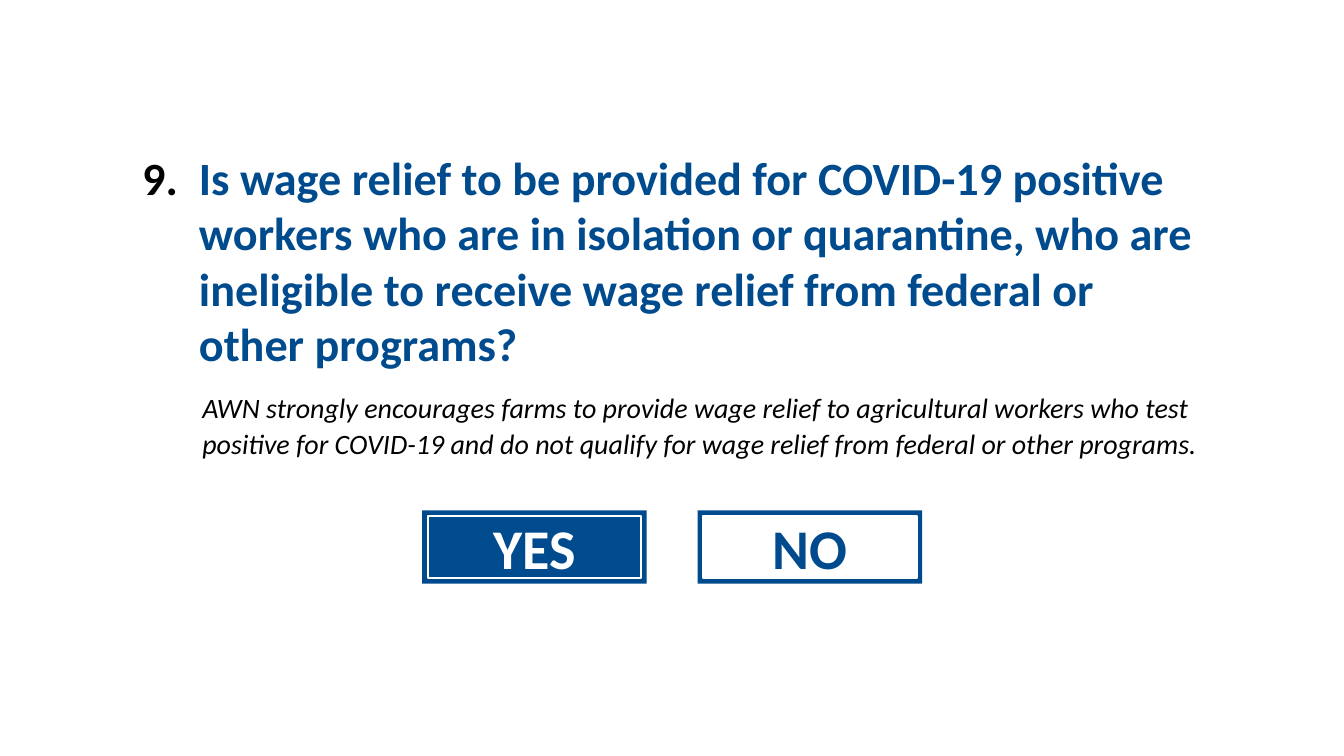
from lxml import etree
from pptx import Presentation
from pptx import util as u
from pptx.dml.color import RGBColor
from pptx.enum import shapes, text
from pptx.oxml.ns import qn

BLUE = RGBColor(0x00, 0x4B, 0x8D)
WHITE = RGBColor(0xFF, 0xFF, 0xFF)
BLACK = RGBColor(0x00, 0x00, 0x00)
QUESTION = (
    "Is wage relief to be provided for COVID-19 positive workers who are in isolation "
    "or quarantine, who are ineligible to receive wage relief from federal or ",
    "other programs?",
)
NOTE = (
    "AWN strongly encourages farms to provide wage relief to agricultural workers who test "
    "positive for COVID-19 and do not qualify for wage relief from federal or other programs."
)


def add_span(para, wording, size, color, bold=False, italic=False):
    """Add one formatted run to a paragraph."""
    span = para.add_run()
    span.text = wording
    span.font.name = "Calibri"
    span.font.size = u.Pt(size)
    span.font.bold = bold
    span.font.italic = italic
    span.font.color.rgb = color


def number_paragraph(para, start, indent):
    """Give a paragraph a black hanging number."""
    properties = para._p.get_or_add_pPr()
    properties.set("marL", str(indent))
    properties.set("indent", str(-indent))
    color = etree.SubElement(properties, qn("a:buClr"))
    etree.SubElement(color, qn("a:srgbClr"), val=str(BLACK))
    etree.SubElement(properties, qn("a:buFont"), typeface="+mj-lt")
    etree.SubElement(properties, qn("a:buAutoNum"), type="arabicPeriod", startAt=str(start))


def fill_question(page, left, top, width, height):
    """Place the numbered question in the title placeholder."""
    title = page.shapes.title
    title.left, title.top, title.width, title.height = left, top, width, height
    frame = title.text_frame
    frame.word_wrap = True
    frame.auto_size = text.MSO_AUTO_SIZE.NONE
    frame.vertical_anchor = text.MSO_ANCHOR.TOP
    para = frame.paragraphs[0]
    para.alignment = text.PP_ALIGN.LEFT
    para.line_spacing = 1.0
    para.space_before = u.Pt(0)
    number_paragraph(para, 9, u.Cm(1.43))
    first, last = QUESTION
    add_span(para, first, 33, BLUE, bold=True)
    para.add_line_break()
    add_span(para, last, 33, BLUE, bold=True)


def add_note(page, left, top, width, height):
    """Place the italic remark below the question."""
    frame = page.shapes.add_textbox(left, top, width, height).text_frame
    frame.word_wrap = True
    para = frame.paragraphs[0]
    para.line_spacing = 1.07
    para.space_after = u.Pt(8)
    add_span(para, NOTE, 20, BLACK, italic=True)


def add_rectangle(group, left, top, width, height, fill, line=None):
    """Add a flat rectangle to a group."""
    box = group.shapes.add_shape(shapes.MSO_SHAPE.RECTANGLE, left, top, width, height)
    box.shadow.inherit = False
    box.fill.solid()
    box.fill.fore_color.rgb = fill
    if line is None:
        box.line.fill.background()
    else:
        box.line.color.rgb = line
        box.line.width = u.Pt(1.5)
    return box


def add_answer(page, left, top, width, height, label, fill, color):
    """Group a blue frame with a labelled inner panel."""
    group = page.shapes.add_group_shape()
    margin = u.Cm(0.14)
    add_rectangle(group, left, top, width, height, BLUE)
    panel = add_rectangle(group, left + margin, top + margin,
                          width - 2 * margin, height - 2 * margin, fill, WHITE)
    frame = panel.text_frame
    frame.margin_top = frame.margin_bottom = 0
    frame.word_wrap = False
    frame.vertical_anchor = text.MSO_ANCHOR.MIDDLE
    para = frame.paragraphs[0]
    para.alignment = text.PP_ALIGN.CENTER
    add_span(para, label, 40, color, bold=True)


def build_question_page(deck):
    """Build the slide with question, remark and answers."""
    page = deck.slides.add_slide(deck.slide_layouts.get_by_name("Title Only"))
    fill_question(page, u.Cm(3.33), u.Cm(3.63), u.Cm(27.18), u.Cm(5.89))
    add_note(page, u.Cm(4.85), u.Cm(9.65), u.Cm(25.68), u.Cm(2.06))
    answers = (("YES", BLUE, WHITE), ("NO", WHITE, BLUE))
    for index, (label, fill, color) in enumerate(answers):
        add_answer(page, u.Cm(10.64 + 6.94 * index), u.Cm(12.86), u.Cm(5.66), u.Cm(1.85),
                   label, fill, color)


def main():
    """Create and save the deck."""
    deck = Presentation()
    deck.slide_width, deck.slide_height = u.Cm(33.87), u.Cm(19.05)
    build_question_page(deck)
    deck.save("out.pptx")


if __name__ == "__main__":
    main()
